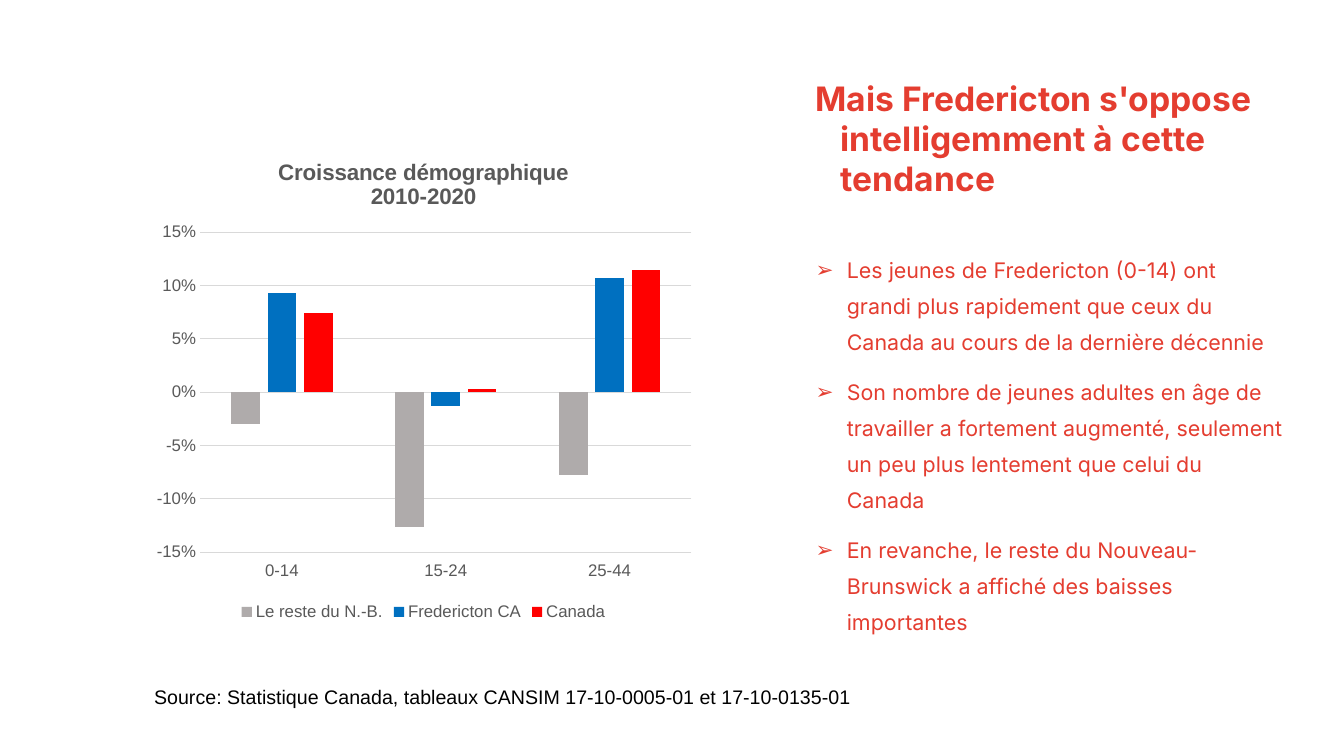
from lxml import etree
from pptx import Presentation
from pptx.chart.data import CategoryChartData as ChartData
from pptx.dml.color import RGBColor
from pptx.enum.chart import XL_CHART_TYPE as Kind
from pptx.enum.chart import XL_LEGEND_POSITION as Legend
from pptx.enum.chart import XL_TICK_LABEL_POSITION as Label
from pptx.enum.chart import XL_TICK_MARK as Tick
from pptx.enum.text import MSO_ANCHOR as Anchor
from pptx.enum.text import MSO_AUTO_SIZE as Fit
from pptx.enum.text import PP_ALIGN as Align
from pptx.oxml import parse_xml
from pptx.oxml.ns import nsdecls, qn
from pptx.util import Emu, Pt

SCALE = 9144  # EMU per px, 100 px to the inch

CORAL = RGBColor(0xE4, 0x3D, 0x30)
BLACK = RGBColor(0x00, 0x00, 0x00)
GREY = RGBColor(0x59, 0x59, 0x59)
RULE = RGBColor(0xD9, 0xD9, 0xD9)
STONE = RGBColor(0xAF, 0xAB, 0xAB)
BLUE = RGBColor(0x00, 0x70, 0xC0)
RED = RGBColor(0xFF, 0x00, 0x00)

TITLE = "Mais Fredericton s'oppose intelligemment à cette tendance"
POINTS = [
    "Les jeunes de Fredericton (0-14) ont grandi plus rapidement que ceux du "
    "Canada au cours de la dernière décennie",
    "Son nombre de jeunes adultes en âge de travailler a fortement augmenté, "
    "seulement un peu plus lentement que celui du Canada",
    "En revanche, le reste du Nouveau-Brunswick a affiché des baisses importantes",
]
SOURCE = "Source: Statistique Canada, tableaux CANSIM 17-10-0005-01 et 17-10-0135-01"
HEAD = "Croissance démographique\n2010-2020"
AGES = ["0-14", "15-24", "25-44"]
GROWTH = [
    ("Le reste du N.-B.", STONE, (-0.03, -0.126, -0.078)),
    ("Fredericton CA", BLUE, (0.093, -0.013, 0.107)),
    ("Canada", RED, (0.074, 0.003, 0.115)),
]
PLOT = {"x": 0.1, "y": 0.19, "w": 0.88, "h": 0.66}  # shares of the chart


def px(n):
    return Emu(n * SCALE)


def apply(item, **format):
    for name, value in format.items():
        setattr(item, name, value)


def style(font, size, color, name="Arial", bold=False):
    apply(font, size=Pt(size), name=name, bold=bold)
    font.color.rgb = color


def place(shape, left, top, width, height):
    apply(shape, left=px(left), top=px(top), width=px(width), height=px(height))


def hang(para, left, first):
    props = para._p.get_or_add_pPr()
    props.set("marL", str(px(left)))
    props.set("indent", str(px(first)))
    return props


def add_title(slide):
    title = slide.shapes.title
    place(title, 774, 72, 509, 137)
    frame = title.text_frame
    apply(frame, text=TITLE, word_wrap=True, auto_size=Fit.NONE,
          vertical_anchor=Anchor.TOP)
    para = frame.paragraphs[0]
    hang(para, 50, -25)
    apply(para, alignment=Align.LEFT, line_spacing=1.0)
    style(para.font, 24, CORAL, "Inter", True)


def add_box(slide, left, top, width, height, fit=Fit.NONE):
    frame = slide.shapes.add_textbox(*map(px, (left, top, width, height))).text_frame
    apply(frame, word_wrap=True, auto_size=fit)
    return frame


def add_list(slide):
    frame = add_box(slide, 774, 240, 509, 433)
    frame.text = "\n".join(POINTS)
    for i, para in enumerate(frame.paragraphs):
        props = hang(para, 56, -31)
        color = etree.SubElement(props, qn("a:buClr"))
        etree.SubElement(color, qn("a:srgbClr"), val=str(CORAL))
        etree.SubElement(props, qn("a:buFont"), typeface="Arial")
        etree.SubElement(props, qn("a:buChar"), char="➢")
        apply(para, line_spacing=1.4, space_before=Pt(10 if i else 0))
        style(para.font, 15.3, CORAL, "Inter")


def add_source(slide):
    frame = add_box(slide, 143, 675, 817, 34, Fit.SHAPE_TO_FIT_TEXT)
    frame.text = SOURCE
    style(frame.paragraphs[0].font, 14, BLACK)


def set_plot(chart):
    area = chart._chartSpace.chart.plotArea
    for old in area.findall(qn("c:layout")):
        area.remove(old)
    modes = "".join(f'<c:{k}Mode val="edge"/>' for k in "xy")
    sizes = "".join(f'<c:{k} val="{v}"/>' for k, v in PLOT.items())
    area.insert(0, parse_xml(
        f'<c:layout {nsdecls("c")}><c:manualLayout><c:layoutTarget val="inner"/>'
        f'{modes}{sizes}</c:manualLayout></c:layout>'))


def set_axes(chart):
    cats, vals = chart.category_axis, chart.value_axis
    for axis in (cats, vals):
        apply(axis, major_tick_mark=Tick.NONE, minor_tick_mark=Tick.NONE)
        style(axis.tick_labels.font, 12, GREY)
    cats.tick_label_position = Label.LOW
    apply(vals, minimum_scale=-0.15, maximum_scale=0.15, major_unit=0.05,
          has_major_gridlines=True)
    apply(vals.tick_labels, number_format="0%", number_format_is_linked=False)
    vals.format.line.fill.background()
    for line in (cats.format.line, vals.major_gridlines.format.line):
        line.color.rgb = RULE
        line.width = Pt(0.75)


def add_chart(slide):
    data = ChartData(number_format="0%")
    data.categories = AGES
    for name, _, values in GROWTH:
        data.add_series(name, values)
    area = map(px, (143, 139, 554, 481))
    chart = slide.shapes.add_chart(Kind.COLUMN_CLUSTERED, *area, data).chart
    style(chart.font, 10, BLACK)

    # Heading and legend
    chart.has_title = True
    chart.chart_title.include_in_layout = False
    frame = chart.chart_title.text_frame
    frame.text = HEAD
    for para in frame.paragraphs:
        style(para.font, 16, GREY, bold=True)
    chart.has_legend = True
    apply(chart.legend, position=Legend.BOTTOM, include_in_layout=False)
    style(chart.legend.font, 12, GREY)

    # Columns
    plot = chart.plots[0]
    apply(plot, gap_width=219, overlap=-27, vary_by_categories=False)
    for series, (_, color, _) in zip(plot.series, GROWTH):
        series.invert_if_negative = False
        series.format.fill.solid()
        series.format.fill.fore_color.rgb = color
    set_axes(chart)
    set_plot(chart)


def main():
    deck = Presentation()
    apply(deck, slide_width=px(1333), slide_height=px(750))
    slide = deck.slides.add_slide(deck.slide_layouts[5])
    add_title(slide)
    add_list(slide)
    add_source(slide)
    add_chart(slide)
    deck.save("out.pptx")


if __name__ == "__main__":
    main()
